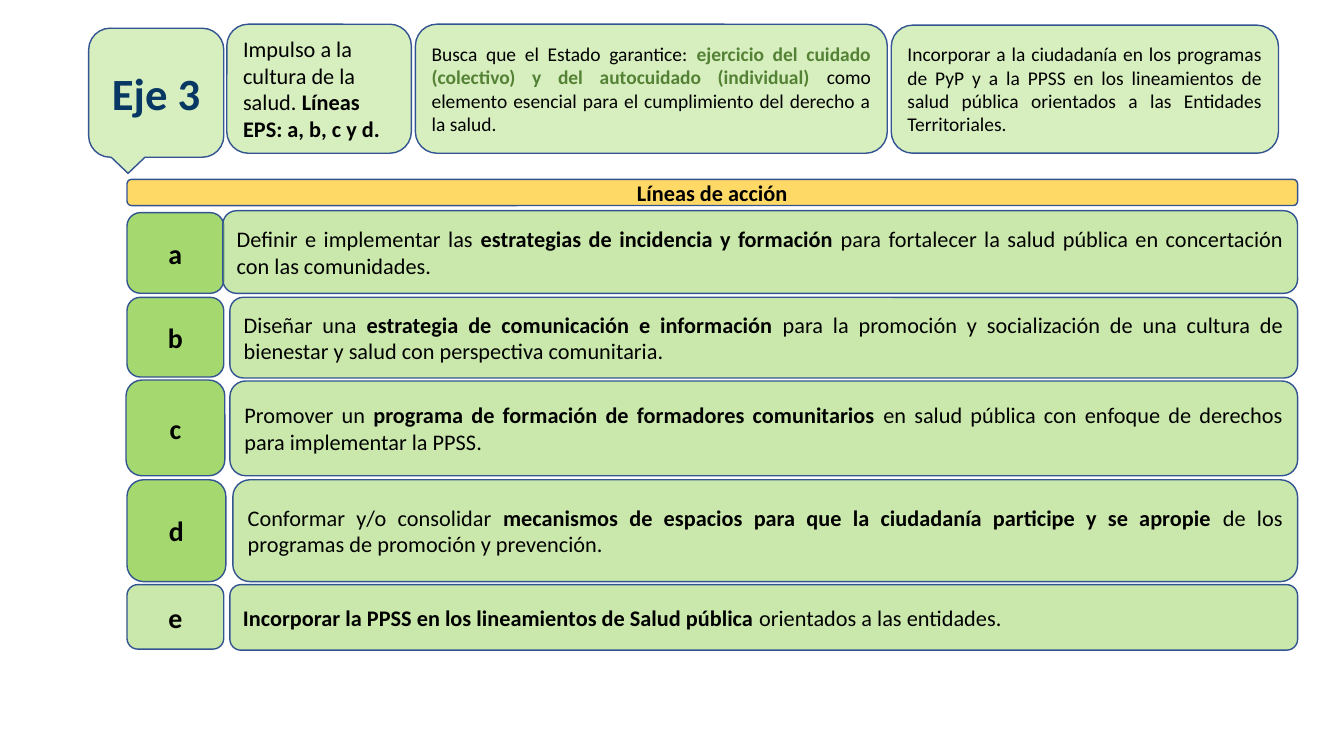
from dataclasses import dataclass

from lxml.etree import SubElement
from pptx import Presentation
from pptx.dml.color import RGBColor
from pptx.enum.shapes import MSO_SHAPE as Shape
from pptx.enum.text import MSO_ANCHOR as Anchor, PP_ALIGN as Align
from pptx.oxml.ns import qn
from pptx.util import Inches, Pt


@dataclass(frozen=True)
class Theme:
    font: str = "Calibri"
    green: str = "92D050"
    yellow: str = "FFD966"
    outline: str = "325491"
    text: str = "000000"
    navy: str = "073763"
    dark_green: str = "548235"
    strong: int = 82
    medium: int = 48
    light: int = 36
    axis_size: float = 31.9
    letter_size: float = 19.9
    body_size: float = 15.9
    detail_size: float = 13.9


THEME = Theme()
ROW_RIGHT = 12.87

# letter, letter opacity, letter (left, top, width, height), body (left, top, height), text
ACTION_LINES = [
    ("a", THEME.strong, (1.26, 2.11, 0.96, 0.8), (2.21, 2.09, 0.82),
     "Definir e implementar las *estrategias de incidencia y formación *para fortalecer "
     "la salud pública en concertación con las comunidades."),
    ("b", THEME.strong, (1.26, 2.95, 0.96, 0.79), (2.28, 2.95, 0.8),
     "Diseñar una *estrategia de comunicación e información* para la promoción y "
     "socialización de una cultura de bienestar y salud con perspectiva comunitaria."),
    ("c", THEME.strong, (1.25, 3.77, 0.98, 0.95), (2.28, 3.78, 0.94),
     "Promover un *programa de formación de formadores comunitarios *en salud pública "
     "con enfoque de derechos para implementar la PPSS."),
    ("d", THEME.strong, (1.26, 4.76, 0.98, 1.01), (2.31, 4.76, 1.01),
     "Conformar y/o consolidar *mecanismos de espacios para que la ciudadanía participe "
     "y se apropie *de los programas de promoción y prevención."),
    ("e", THEME.medium, (1.26, 5.8, 0.96, 0.64), (2.28, 5.8, 0.65),
     "*Incorporar la PPSS en los lineamientos de Salud pública *orientados a las entidades."),
]

# left, top, width, height, text, format
SUMMARY_CARDS = [
    (2.25, 0.24, 1.83, 1.28,
     "Impulso a la cultura de la salud. *Líneas EPS: a, b, c y d.*",
     dict(size=THEME.body_size, align=Align.LEFT)),
    (4.12, 0.24, 4.68, 1.28,
     "Busca que el Estado garantice: *ejercicio del cuidado (colectivo) y del autocuidado "
     "(individual) *como elemento esencial para el cumplimiento del derecho a la salud.",
     dict(size=THEME.detail_size, bold_color=THEME.dark_green)),
    (8.84, 0.25, 3.84, 1.27,
     "Incorporar a la ciudadanía en los programas de PyP y a la PPSS en los lineamientos "
     "de salud pública orientados a las Entidades Territoriales.",
     dict(size=THEME.detail_size)),
]


def write(box, text, size, align, bold_color):
    """Fill the box with one paragraph; parts between asterisks are bold."""
    frame = box.text_frame
    frame.word_wrap = True
    frame.vertical_anchor = Anchor.MIDDLE
    para = frame.paragraphs[0]
    para.alignment = align
    for index, part in enumerate(text.split("*")):
        if not part:
            continue
        bold = index % 2 == 1
        span = para.add_run()
        span.text = part
        span.font.name = THEME.font
        span.font.size = Pt(size)
        span.font.bold = bold
        span.font.color.rgb = RGBColor.from_string(bold_color if bold else THEME.text)


def add_box(page, left, top, width, height, text, *, size=THEME.body_size,
            align=Align.JUSTIFY, bold_color=THEME.text, fill=THEME.green,
            opacity=100, kind=Shape.ROUNDED_RECTANGLE):
    box = page.shapes.add_shape(
        kind, Inches(left), Inches(top), Inches(width), Inches(height))
    box.shadow.inherit = False
    box.fill.solid()
    box.fill.fore_color.rgb = RGBColor.from_string(fill)
    if opacity < 100:
        color = box.fill._xPr.find(qn("a:solidFill"))[0]
        SubElement(color, qn("a:alpha")).set("val", str(opacity * 1000))
    box.line.color.rgb = RGBColor.from_string(THEME.outline)
    box.line.width = Pt(1)
    write(box, text, size, align, bold_color)


def add_action_line(page, letter, opacity, letter_area, body_area, text):
    add_box(page, *letter_area, f"*{letter}*", size=THEME.letter_size,
            align=Align.CENTER, opacity=opacity)
    left, top, height = body_area
    add_box(page, left, top, ROW_RIGHT - left, height, text, opacity=THEME.medium)


def main():
    deck = Presentation()
    deck.slide_width, deck.slide_height = Inches(13.33), Inches(7.5)
    page = deck.slides.add_slide(deck.slide_layouts[6])

    for action_line in ACTION_LINES:
        add_action_line(page, *action_line)
    add_box(page, 1.26, 1.78, ROW_RIGHT - 1.26, 0.26, "*Líneas de acción*",
            align=Align.CENTER, fill=THEME.yellow)
    for *area, text, style in SUMMARY_CARDS:
        add_box(page, *area, text, opacity=THEME.light, **style)
    add_box(page, 0.88, 0.28, 1.34, 1.28, "*Eje 3*", size=THEME.axis_size,
            align=Align.CENTER, bold_color=THEME.navy, opacity=THEME.light,
            kind=Shape.ROUNDED_RECTANGULAR_CALLOUT)

    deck.save("out.pptx")


if __name__ == "__main__":
    main()
